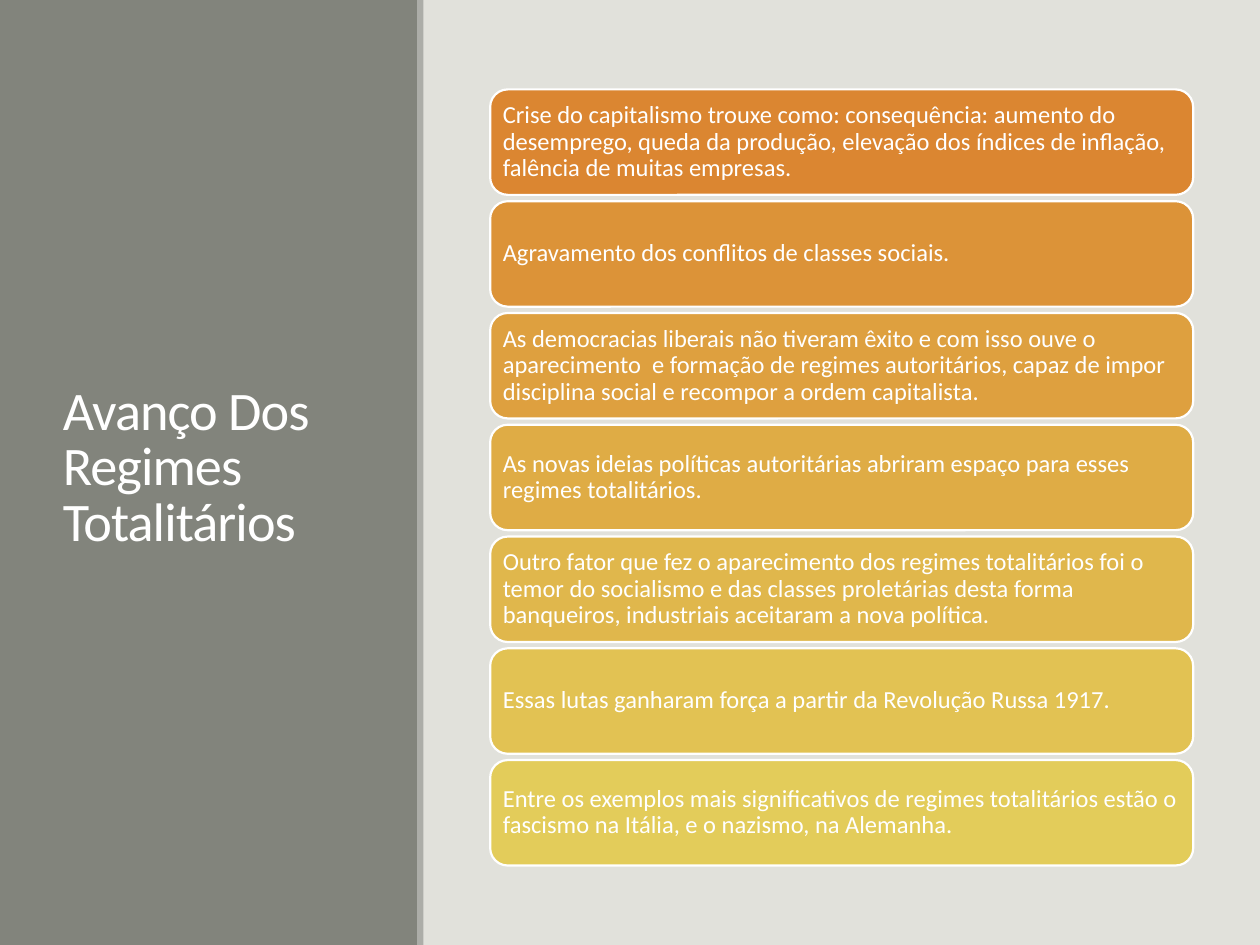
"""Builds a slide with a title panel and a stack of seven graded cards."""
from pptx import Presentation
from pptx.dml.color import RGBColor
from pptx.enum.shapes import MSO_SHAPE
from pptx.enum.text import MSO_ANCHOR, PP_ALIGN
from pptx.util import Inches, Pt

WIDE, HIGH = 10, 7.5
COLORS = {"back": "E1E1DB", "panel": "82847C", "edge": "ACADA8", "white": "FFFFFF"}
TITLE = "Avanço Dos Regimes Totalitários"
CARDS = [
    ("DB8631", "Crise do capitalismo trouxe como: consequência: aumento do desemprego, "
     "queda da produção, elevação dos índices de inflação, falência de muitas empresas."),
    ("DC9338", "Agravamento dos conflitos de classes sociais."),
    ("DEA03F", "As democracias liberais não tiveram êxito e com isso ouve o aparecimento  "
     "e formação de regimes autoritários, capaz de impor disciplina social e recompor "
     "a ordem capitalista."),
    ("DFAC45", "As novas ideias políticas autoritárias abriram espaço para esses regimes "
     "totalitários."),
    ("E0B74C", "Outro fator que fez o aparecimento dos regimes totalitários foi o temor do "
     "socialismo e das classes proletárias desta forma banqueiros, industriais aceitaram "
     "a nova política."),
    ("E2C253", "Essas lutas ganharam força a partir da Revolução Russa 1917."),
    ("E3CC5A", "Entre os exemplos mais significativos de regimes totalitários estão o "
     "fascismo na Itália, e o nazismo, na Alemanha."),
]
STACK = {"left": 3.89, "top": 0.71, "width": 5.58, "height": 6.16, "gap": 0.05}


def add_block(slide, box, fill, kind=MSO_SHAPE.RECTANGLE, line=None):
    shape = slide.shapes.add_shape(kind, *map(Inches, box))
    shape.shadow.inherit = False
    shape.fill.solid()
    shape.fill.fore_color.rgb = RGBColor.from_string(fill)
    if line:
        shape.line.color.rgb = RGBColor.from_string(line)
        shape.line.width = Pt(1.25)
    else:
        shape.line.fill.background()
    return shape


def put_text(shape, text, size=14, lead=0.9, pad=(0.06, 0.06), track=None):
    frame = shape.text_frame
    frame.word_wrap = True
    frame.vertical_anchor = MSO_ANCHOR.MIDDLE
    frame.margin_left = frame.margin_right = Inches(pad[0])
    frame.margin_top = frame.margin_bottom = Inches(pad[1])
    para = frame.paragraphs[0]
    para.alignment = PP_ALIGN.LEFT
    para.line_spacing = lead
    run = para.add_run()
    run.text = text
    run.font.name = "Calibri"
    run.font.size = Pt(size)
    run.font.color.rgb = RGBColor.from_string(COLORS["white"])
    if track:
        run.font._element.set("spc", str(int(track * 100)))


def main():
    deck = Presentation()
    deck.slide_width, deck.slide_height = Inches(WIDE), Inches(HIGH)
    slide = deck.slides.add_slide(deck.slide_layouts[6])
    slide.background.fill.solid()
    slide.background.fill.fore_color.rgb = RGBColor.from_string(COLORS["back"])

    add_block(slide, (0, 0, 3.32, HIGH), COLORS["panel"])
    title = slide.shapes.add_textbox(*map(Inches, (0.4, 0.57, 2.53, 6.31)))
    put_text(title, TITLE, size=31, lead=0.85, pad=(0.1, 0.05), track=-0.5)
    add_block(slide, (3.31, 0, 0.05, HIGH), COLORS["edge"])

    step = (STACK["height"] + STACK["gap"]) / len(CARDS)
    for row, (fill, text) in enumerate(CARDS):
        box = (STACK["left"], STACK["top"] + row * step,
               STACK["width"], step - STACK["gap"])
        card = add_block(slide, box, fill, MSO_SHAPE.ROUNDED_RECTANGLE, COLORS["white"])
        put_text(card, text)

    deck.save("out.pptx")


if __name__ == "__main__":
    main()
